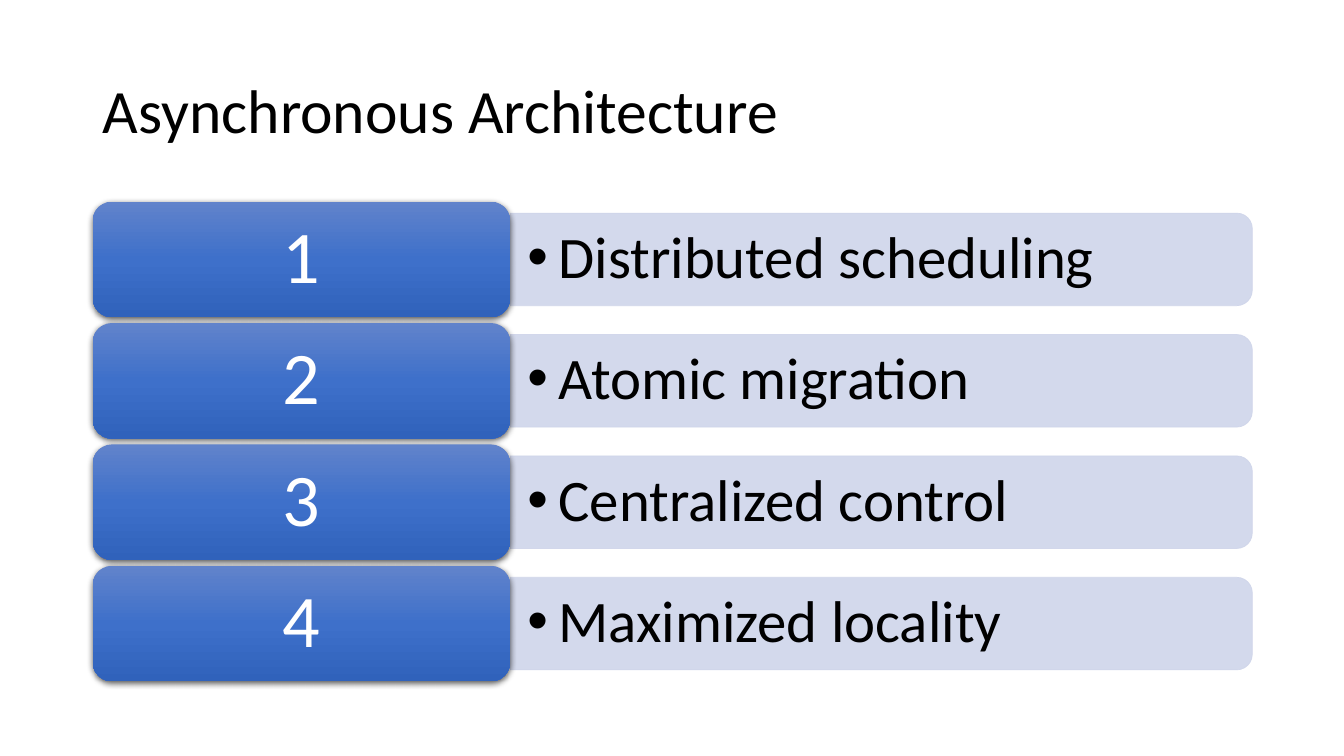
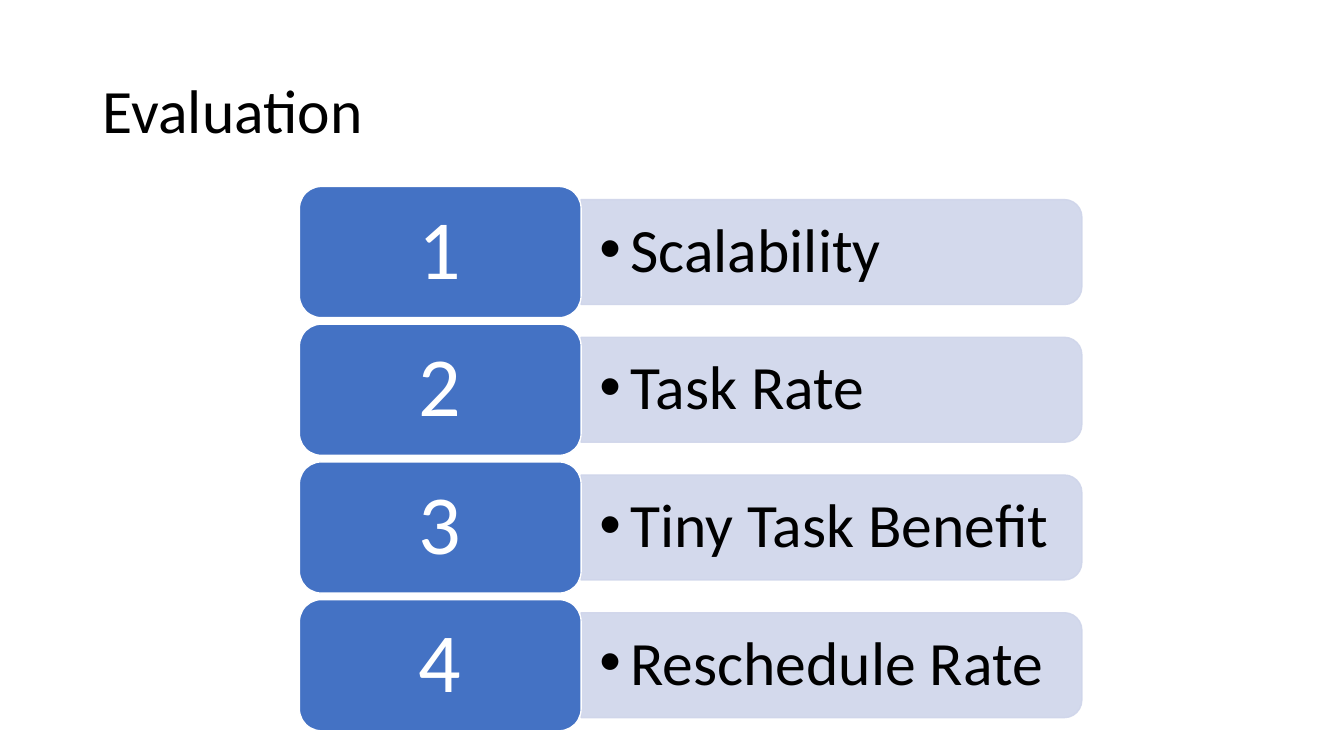
"""Build two slides with titles and numbered topic bands."""
from copy import deepcopy

from lxml import etree
from pptx import Presentation
from pptx.dml.color import RGBColor
from pptx.enum import shapes, text
from pptx.oxml import ns
from pptx.util import Inches, Pt

FONT = "Calibri"
BLACK = RGBColor(0x00, 0x00, 0x00)
WHITE = RGBColor(0xFF, 0xFF, 0xFF)
BLUE = RGBColor(0x44, 0x72, 0xC4)
PALE = RGBColor(0xCF, 0xD5, 0xEA)
GRADIENT = [
    (0, RGBColor(0x61, 0x83, 0xCB)),
    (0.5, RGBColor(0x3E, 0x70, 0xCA)),
    (1, RGBColor(0x30, 0x62, 0xBB)),
]
NUMBER_SHARE = 0.36
BAND_SHARE = 0.8
GAP_SHARE = 0.05

SLIDES = [
    dict(
        title="Asynchronous Architecture",
        topics=["Distributed scheduling", "Atomic migration",
                "Centralized control", "Maximized locality"],
        area=(0.92, 2, 11.5, 4.76),
        number_size=53, topic_size=42, inset=0.17, line=0.5, glossy=True,
    ),
    dict(
        title="Evaluation",
        topics=["Scalability", "Task Rate", "Tiny Task Benefit", "Reschedule Rate"],
        area=(2.97, 1.85, 7.76, 5.4),
        number_size=60, topic_size=44, inset=0.18, line=1, glossy=False,
    ),
]


def add_xml(parent, tag, **attributes):
    return etree.SubElement(parent, ns.qn(tag), attributes)


def write(shape, words, size, color=BLACK, align=text.PP_ALIGN.LEFT,
          inset=0.1, bullet=False):
    frame = shape.text_frame
    frame.word_wrap = True
    frame.auto_size = text.MSO_AUTO_SIZE.NONE
    frame.vertical_anchor = text.MSO_ANCHOR.MIDDLE
    frame.margin_left = frame.margin_right = Inches(inset)
    frame.margin_top = frame.margin_bottom = Inches(0.05)
    para = frame.paragraphs[0]
    para.alignment = align
    para.line_spacing = 0.9
    span = para.add_run()
    span.text = words
    span.font.name = FONT
    span.font.size = Pt(size)
    span.font.color.rgb = color
    if bullet:
        properties = para._p.get_or_add_pPr()
        properties.set("marL", str(Inches(0.31)))
        properties.set("indent", str(-Inches(0.31)))
        add_xml(properties, "a:buFont", typeface="Arial")
        add_xml(properties, "a:buChar", char="•")


def add_band(page, left, top, width, height, line):
    band = page.shapes.add_shape(
        shapes.MSO_SHAPE.ROUND_2_SAME_RECTANGLE,
        Inches(left + (width - height) / 2), Inches(top + (height - width) / 2),
        Inches(height), Inches(width))
    band.rotation = 90
    band.shadow.inherit = False
    band.line.width = Pt(line)
    for fill in (band.fill, band.line.fill):
        fill.solid()
        fill.fore_color.rgb = PALE
    for color in band._element.spPr.iter(ns.qn("a:srgbClr")):
        add_xml(color, "a:alpha", val="90000")


def make_glossy(box):
    box.line.fill.background()
    box.fill.gradient()
    box.fill.gradient_angle = 270
    properties = box._element.spPr
    stops = properties.find(".//" + ns.qn("a:gsLst"))
    stops.append(deepcopy(stops[0]))
    for stop, (position, color) in zip(box.fill.gradient_stops, GRADIENT):
        stop.position = position
        stop.color.rgb = color
    shadow = add_xml(properties.find(ns.qn("a:effectLst")), "a:outerShdw",
                     blurRad=str(Pt(4.5)), dist=str(Pt(1.5)), dir="5400000",
                     algn="ctr", rotWithShape="0")
    add_xml(add_xml(shadow, "a:srgbClr", val=str(BLACK)), "a:alpha", val="63000")


def add_number(page, place, number, size, glossy):
    box = page.shapes.add_shape(shapes.MSO_SHAPE.ROUNDED_RECTANGLE, *map(Inches, place))
    box.shadow.inherit = False
    if glossy:
        make_glossy(box)
    else:
        box.fill.solid()
        box.fill.fore_color.rgb = BLUE
        box.line.color.rgb = WHITE
        box.line.width = Pt(1)
    write(box, str(number), size, color=WHITE, align=text.PP_ALIGN.CENTER)


def add_slide(deck, content):
    page = deck.slides.add_slide(deck.slide_layouts[5])
    title = page.shapes.title
    title.left, title.top, title.width, title.height = map(Inches, (0.92, 0.4, 11.5, 1.45))
    write(title, content["title"], 44)

    left, top, width, total = content["area"]
    count = len(content["topics"])
    height = total / (count + (count - 1) * GAP_SHARE)
    number_width = width * NUMBER_SHARE
    band_left, band_width = left + number_width, width - number_width
    band_height = height * BAND_SHARE
    for index, topic in enumerate(content["topics"]):
        row_top = top + index * height * (1 + GAP_SHARE)
        band = (band_left, row_top + (height - band_height) / 2, band_width, band_height)
        add_band(page, *band, content["line"])
        label = page.shapes.add_textbox(*map(Inches, band))
        write(label, topic, content["topic_size"], inset=content["inset"], bullet=True)
        add_number(page, (left, row_top, number_width, height), index + 1,
                   content["number_size"], content["glossy"])


def main():
    deck = Presentation()
    deck.slide_width, deck.slide_height = Inches(13.33), Inches(7.5)
    for content in SLIDES:
        add_slide(deck, content)
    deck.save("out.pptx")


if __name__ == "__main__":
    main()
